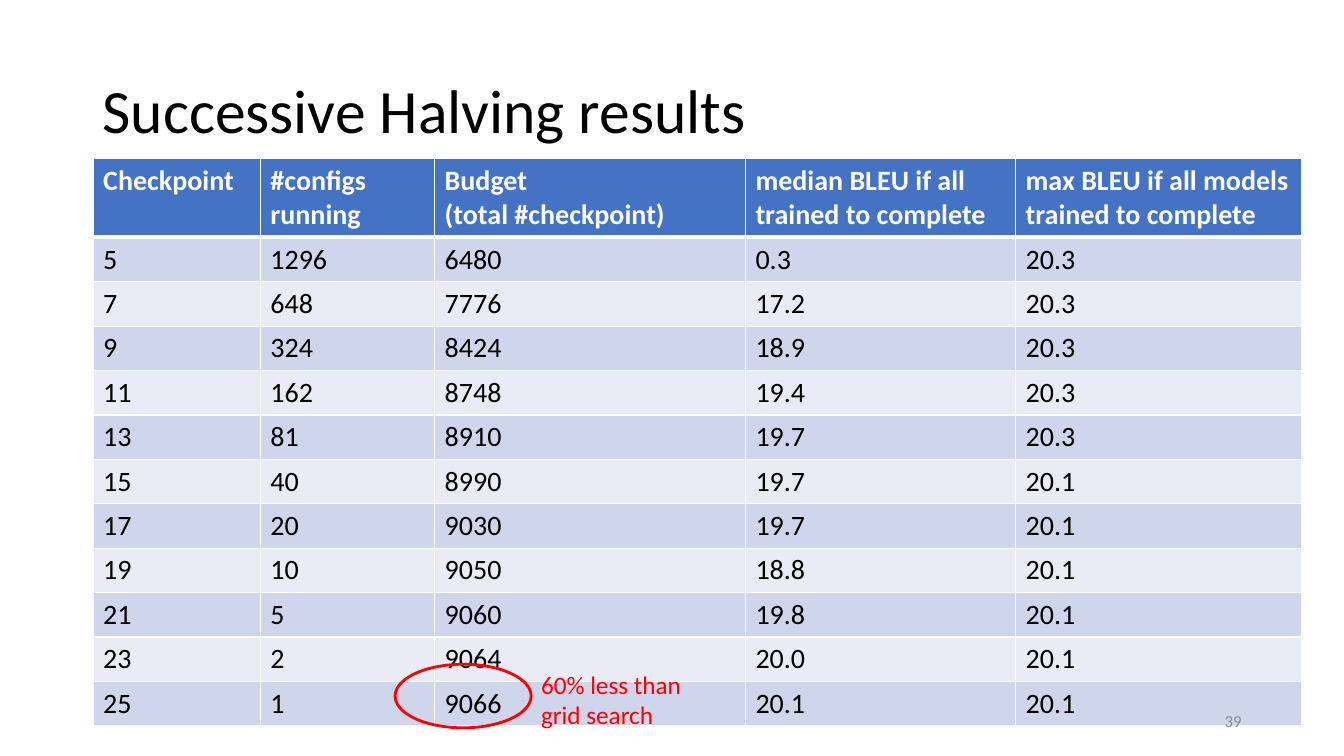
from lxml import etree
from pptx import Presentation
from pptx.dml.color import RGBColor
from pptx.enum import shapes, text
from pptx.oxml import ns
from pptx.util import Pt

FONT = "Calibri"
BLACK = RGBColor(0x00, 0x00, 0x00)
WHITE = RGBColor(0xFF, 0xFF, 0xFF)
RED = RGBColor(0xFF, 0x00, 0x00)
GREY = RGBColor(0x8C, 0x8C, 0x8C)
HEADER_BLUE = RGBColor(0x44, 0x72, 0xC4)
DARK_BAND = RGBColor(0xCF, 0xD5, 0xEA)
LIGHT_BAND = RGBColor(0xE9, 0xEB, 0xF5)

COLUMN_WIDTHS = (119.5, 124.5, 222, 193, 204)
HEADER_HEIGHT = 56
ROW_HEIGHT = 31.7
HEADERS = (
    "Checkpoint",
    "#configs\nrunning",
    "Budget\n(total #checkpoint)",
    "median BLEU if all trained to complete",
    "max BLEU if all models trained to complete",
)
RESULTS = (
    ("5", "1296", "6480", "0.3", "20.3"),
    ("7", "648", "7776", "17.2", "20.3"),
    ("9", "324", "8424", "18.9", "20.3"),
    ("11", "162", "8748", "19.4", "20.3"),
    ("13", "81", "8910", "19.7", "20.3"),
    ("15", "40", "8990", "19.7", "20.1"),
    ("17", "20", "9030", "19.7", "20.1"),
    ("19", "10", "9050", "18.8", "20.1"),
    ("21", "5", "9060", "19.8", "20.1"),
    ("23", "2", "9064", "20.0", "20.1"),
    ("25", "1", "9066", "20.1", "20.1"),
)


def write(text_frame, words, size, color, bold=False, align=text.PP_ALIGN.LEFT):
    """Fill a text frame and format every run in it."""
    text_frame.text = words
    text_frame.word_wrap = True
    for paragraph in text_frame.paragraphs:
        paragraph.alignment = align
        for run in paragraph.runs:
            run.font.name = FONT
            run.font.size = Pt(size)
            run.font.bold = bold
            run.font.color.rgb = color


def add_borders(cell, top, bottom):
    """Draw white borders, with top and bottom widths in points."""
    properties = cell._tc.get_or_add_tcPr()
    for side, width in (("L", 1), ("R", 1), ("T", top), ("B", bottom)):
        line = etree.SubElement(properties, ns.qn(f"a:ln{side}"), w=str(Pt(width)))
        fill = etree.SubElement(line, ns.qn("a:solidFill"))
        etree.SubElement(fill, ns.qn("a:srgbClr"), val=str(WHITE))


def place_title(slide, left, top, width, height):
    """Move and format the title placeholder."""
    title = slide.shapes.title
    title.left, title.top, title.width, title.height = map(Pt, (left, top, width, height))
    write(title.text_frame, "Successive Halving results", 44, BLACK)
    title.text_frame.vertical_anchor = text.MSO_ANCHOR.MIDDLE
    title.text_frame.paragraphs[0].line_spacing = 0.9


def add_results_table(slide, left, top):
    """Add the banded table of results per checkpoint."""
    rows = (HEADERS, *RESULTS)
    height = HEADER_HEIGHT + ROW_HEIGHT * len(RESULTS)
    table = slide.shapes.add_table(
        len(rows), len(HEADERS), Pt(left), Pt(top), Pt(sum(COLUMN_WIDTHS)), Pt(height)
    ).table
    for column, width in zip(table.columns, COLUMN_WIDTHS):
        column.width = Pt(width)
    for index, values in enumerate(rows):
        header = index == 0
        table.rows[index].height = Pt(HEADER_HEIGHT if header else ROW_HEIGHT)
        band = HEADER_BLUE if header else DARK_BAND if index % 2 else LIGHT_BAND
        for cell, value in zip(table.rows[index].cells, values):
            write(cell.text_frame, value, 20, WHITE if header else BLACK, bold=header)
            add_borders(cell, 3 if index == 1 else 1, 3 if header else 1)
            cell.fill.solid()
            cell.fill.fore_color.rgb = band


def add_page_number(slide, left, top, width, height):
    """Add the page number at the right of its box."""
    box = slide.shapes.add_textbox(Pt(left), Pt(top), Pt(width), Pt(height))
    write(box.text_frame, "39", 12, GREY, align=text.PP_ALIGN.RIGHT)
    box.text_frame.vertical_anchor = text.MSO_ANCHOR.MIDDLE


def add_saving_callout(slide, left, top, ring_width, ring_height):
    """Ring the final budget and put the remark beside it."""
    group = slide.shapes.add_group_shape()
    ring = group.shapes.add_shape(
        shapes.MSO_SHAPE.OVAL, Pt(left), Pt(top), Pt(ring_width), Pt(ring_height)
    )
    ring.shadow.inherit = False
    ring.fill.background()
    ring.line.color.rgb = RED
    ring.line.width = Pt(2)
    remark = group.shapes.add_textbox(Pt(left + ring_width), Pt(top), Pt(121), Pt(51))
    write(remark.text_frame, "60% less than grid search", 18, RED)


def main():
    """Build the slide and save it."""
    presentation = Presentation()
    presentation.slide_width, presentation.slide_height = Pt(960), Pt(540)
    slide = presentation.slides.add_slide(presentation.slide_layouts[5])
    place_title(slide, 66, 28.8, 828, 104.4)
    add_results_table(slide, 66.5, 113.3)
    add_page_number(slide, 678, 500.5, 216, 28.8)
    add_saving_callout(slide, 282.2, 474.5, 97.2, 45.4)
    presentation.save("out.pptx")


if __name__ == "__main__":
    main()
